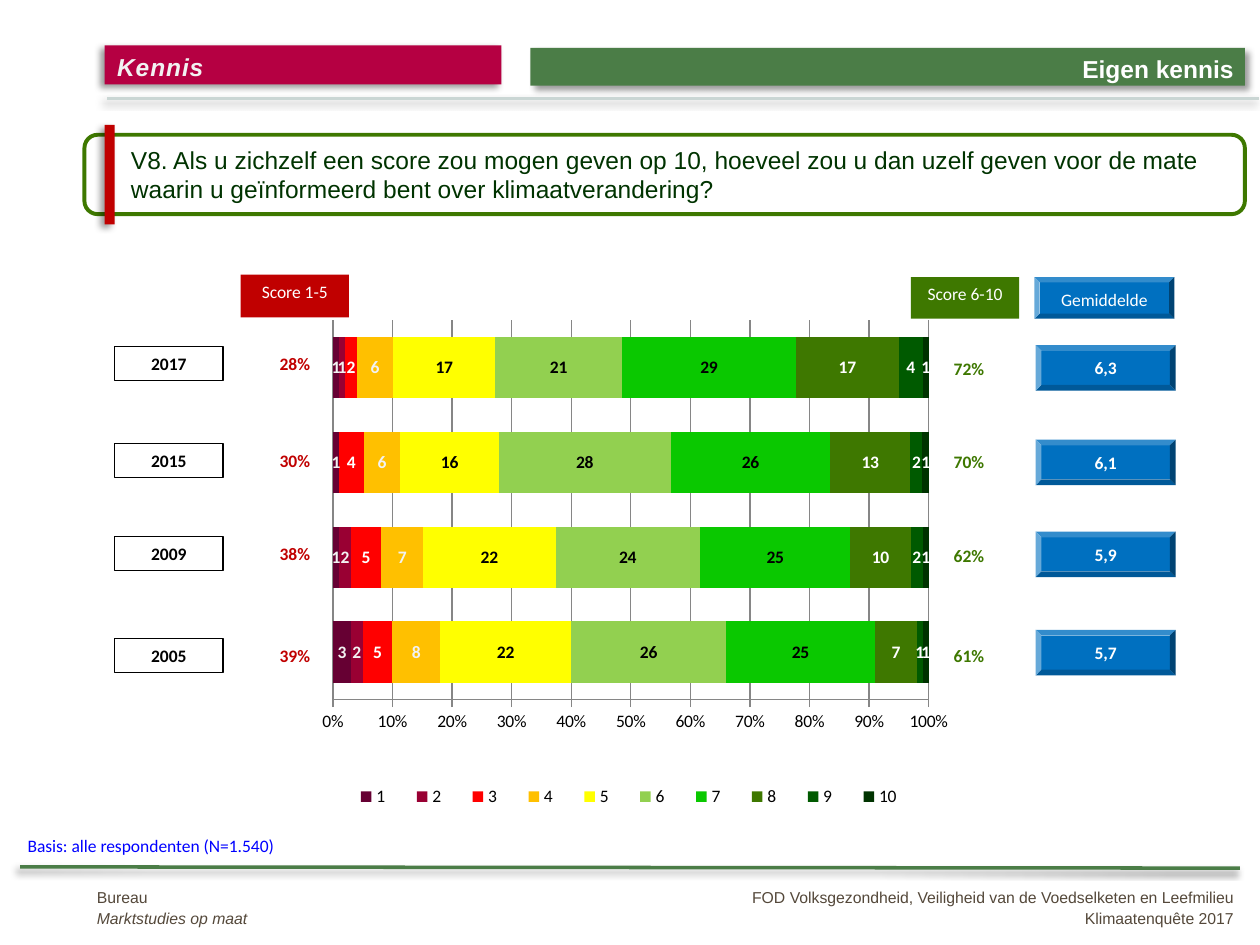
import pptx
import pptx.chart.data
import pptx.dml.color
import pptx.enum.chart
import pptx.enum.shapes
import pptx.enum.text
import pptx.oxml
import pptx.oxml.ns
import pptx.util
from lxml import etree

Inches, Pt = pptx.util.Inches, pptx.util.Pt
RGBColor = pptx.dml.color.RGBColor
SHAPE = pptx.enum.shapes.MSO_SHAPE
ALIGN = pptx.enum.text.PP_ALIGN
TOP = pptx.enum.text.MSO_ANCHOR.TOP
qn = pptx.oxml.ns.qn

WHITE = RGBColor(0xFF, 0xFF, 0xFF)
BLACK = RGBColor(0, 0, 0)
PALE = RGBColor(0xF2, 0xF2, 0xF2)
GRAY = RGBColor(0x86, 0x86, 0x86)
MIST = RGBColor(0xCA, 0xD6, 0xD4)
BROWN = RGBColor(0x54, 0x48, 0x3A)
MOSS = RGBColor(0x4B, 0x7D, 0x47)
GREEN = RGBColor(0x3E, 0x78, 0x00)
DARK = RGBColor(0x00, 0x33, 0x00)
WINE = RGBColor(0xB5, 0x00, 0x42)
RED = RGBColor(0xC0, 0x00, 0x00)
BLUE = RGBColor(0x00, 0x70, 0xC0)
LINK = RGBColor(0x00, 0x00, 0xFF)

# name, values for 2005 to 2017, fill, label colour
SERIES = [
    ("1", (3, 1, 1, 1), RGBColor(0x66, 0x00, 0x33), PALE),
    ("2", (2, 2, None, 1), RGBColor(0x99, 0x00, 0x33), PALE),
    ("3", (5, 5, 4, 2), RGBColor(0xFF, 0x00, 0x00), WHITE),
    ("4", (8, 7, 6, 6), RGBColor(0xFF, 0xC0, 0x00), PALE),
    ("5", (22, 22, 16, 17), RGBColor(0xFF, 0xFF, 0x00), BLACK),
    ("6", (26, 24, 28, 21), RGBColor(0x92, 0xD0, 0x50), BLACK),
    ("7", (25, 25, 26, 29), RGBColor(0x0A, 0xC8, 0x00), BLACK),
    ("8", (7, 10, 13, 17), GREEN, WHITE),
    ("9", (1, 2, 2, 4), RGBColor(0x00, 0x5A, 0x00), WHITE),
    ("10", (1, 1, 1, 1), DARK, WHITE),
]


def shade(shape, angle=None):
    """Give the shape a soft shadow, or none without an angle."""
    effect = etree.SubElement(shape.element.spPr, qn("a:effectLst"))
    if angle is None:
        return
    outer = etree.SubElement(effect, qn("a:outerShdw"), blurRad=str(Pt(4)),
                             dist=str(Pt(3)), dir=str(angle * 60000), rotWithShape="0")
    color = etree.SubElement(outer, qn("a:srgbClr"), val="000000")
    etree.SubElement(color, qn("a:alpha"), val="40000")


def write(shape, text, size, color, font="Calibri", bold=False, align=ALIGN.LEFT, after=0):
    frame = shape.text_frame
    frame.word_wrap = True
    frame.vertical_anchor = TOP
    frame.text = text
    for para in frame.paragraphs:
        para.alignment = align
        para.space_after = Pt(after)
        for run in para.runs:
            run.font.size = Pt(size)
            run.font.name = font
            run.font.bold = bold
            run.font.color.rgb = color
    return frame


def block(slide, kind, box, fill, line=None, width=0.75, angle=None):
    shape = slide.shapes.add_shape(kind, *map(Inches, box))
    shape.fill.solid()
    shape.fill.fore_color.rgb = fill
    if line is None:
        shape.line.fill.background()
    else:
        shape.line.color.rgb = line
        shape.line.width = Pt(width)
    shade(shape, angle)
    return shape


def label(slide, box, text, size, color, **style):
    shape = slide.shapes.add_textbox(*map(Inches, box))
    return write(shape, text, size, color, **style)


def rule(slide, start, end, color):
    line = slide.shapes.add_connector(pptx.enum.shapes.MSO_CONNECTOR.STRAIGHT,
                                      *map(Inches, start + end))
    line.line.color.rgb = color
    line.line.width = Pt(2)
    shade(line, 135)


def header(slide, left, top):
    rule(slide, (left + 0.02, top + 0.42), (9.99, top + 0.42), MIST)
    title = slide.shapes.title
    title.left, title.top = Inches(left), Inches(top)
    title.width, title.height = Inches(3.15), Inches(0.31)
    title.fill.solid()
    title.fill.fore_color.rgb = WINE
    title.line.fill.background()
    shade(title, 135)
    frame = write(title, "Kennis", 14, PALE, font="Arial", bold=True)
    font = frame.paragraphs[0].runs[0].font
    font.italic = True
    font._element.set("spc", "50")
    block(slide, SHAPE.RECTANGLE, (left + 3.38, top + 0.02, 5.67, 0.3), MOSS, angle=45)
    label(slide, (left + 5.11, top + 0.02, 3.95, 0.29), "Eigen kennis", 14, WHITE,
          font="Arial", bold=True, align=ALIGN.RIGHT)


def question(slide, left, top, width, height):
    frame = write(
        block(slide, SHAPE.ROUNDED_RECTANGLE, (left, top, width, height), WHITE, GREEN, 2.25),
        "V8. Als u zichzelf een score zou mogen geven op 10, hoeveel zou u dan uzelf "
        "geven voor de mate waarin u geïnformeerd bent over klimaatverandering?",
        14, DARK, font="Arial")
    props = frame.paragraphs[0]._p.get_or_add_pPr()
    props.set("marL", str(Inches(0.24)))
    props.set("indent", "0")
    block(slide, SHAPE.RECTANGLE, (left + 0.16, top - 0.08, 0.08, 0.79), RED, angle=135)


def arrange(parent, spot, place, target=""):
    """Place a chart part by fractions of the chart's size."""
    for old in parent.findall(qn("c:layout")):
        parent.remove(old)
    layout = etree.Element(qn("c:layout"))
    manual = etree.SubElement(layout, qn("c:manualLayout"))
    if target:
        etree.SubElement(manual, qn("c:layoutTarget"), val=target)
    for name in ("xMode", "yMode"):
        etree.SubElement(manual, qn("c:" + name), val="edge")
    for name, value in zip("xywh", place):
        etree.SubElement(manual, qn("c:" + name), val=str(value))
    parent.insert(spot, layout)


def scores(slide, box):
    data = pptx.chart.data.CategoryChartData(number_format="0")
    data.categories = ["1", "2", "3", "4"]
    for name, values, _, _ in SERIES:
        data.add_series(name, values)
    kinds = pptx.enum.chart
    chart = slide.shapes.add_chart(kinds.XL_CHART_TYPE.BAR_STACKED_100,
                                   *map(Inches, box), data).chart
    chart.has_title = False
    chart.font.size = Pt(10)
    chart.font.name = "Calibri"
    chart.font.color.rgb = BLACK
    plot = chart.plots[0]
    plot.gap_width, plot.overlap = 54, 100
    plot.vary_by_categories = False
    for series, (_, _, fill, color) in zip(plot.series, SERIES):
        series.format.fill.solid()
        series.format.fill.fore_color.rgb = fill
        tags = series.data_labels
        tags.show_value = True
        tags.number_format, tags.number_format_is_linked = "0", False
        tags.font.size = Pt(10)
        tags.font.bold = True
        tags.font.color.rgb = color
    chart.category_axis.visible = False
    axis = chart.value_axis
    axis.has_major_gridlines = True
    axis.major_tick_mark = kinds.XL_TICK_MARK.OUTSIDE
    axis.tick_labels.number_format = "0%"
    axis.tick_labels.number_format_is_linked = False
    axis.maximum_scale, axis.major_unit = 1, 0.1
    for part in (axis, axis.major_gridlines):
        part.format.line.color.rgb = GRAY
    chart.has_legend = True
    chart.legend.position = kinds.XL_LEGEND_POSITION.BOTTOM
    chart.legend.include_in_layout = False
    root = chart.element
    arrange(next(root.iter(qn("c:plotArea"))), 0, (0.097, 0.024, 0.831, 0.714), "inner")
    arrange(next(root.iter(qn("c:legend"))), 1, (0.1, 0.88, 0.82, 0.08))


def heads(slide, top):
    for kind, box, fill, text in (
            (SHAPE.RECTANGLE, (1.91, top - 0.02, 0.86, 0.34), RED, "Score 1-5"),
            (SHAPE.RECTANGLE, (7.23, top, 0.86, 0.33), GREEN, "Score 6-10"),
            (SHAPE.BEVEL, (8.21, top, 1.11, 0.33), BLUE, "Gemiddelde")):
        write(block(slide, kind, box, fill), text, 10, WHITE, align=ALIGN.CENTER, after=10)


def survey(slide, top, year, low, high, mean, drop, rise):
    """Place a year's figures; drop and rise shift the high share and the mean."""
    style = dict(bold=True, align=ALIGN.CENTER, after=10)
    write(block(slide, SHAPE.RECTANGLE, (0.91, top, 0.86, 0.27), WHITE, BLACK),
          year, 10, BLACK, **style)
    label(slide, (1.91, top, 0.86, 0.28), low, 10, RED, **style)
    label(slide, (7.26, top + drop, 0.86, 0.27), high, 10, GREEN, **style)
    write(block(slide, SHAPE.BEVEL, (8.22, top - rise, 1.11, 0.36), BLUE),
          mean, 10, WHITE, **style)


def footer(slide, top):
    label(slide, (0.12, top - 0.3, 2.68, 0.27), "Basis: alle respondenten (N=1.540)", 10, LINK)
    rule(slide, (0.16, top), (9.84, top + 0.01), MOSS)
    left = label(slide, (0.67, top + 0.1, 2.36, 0.43), "Bureau\nMarktstudies op maat",
                 9, BROWN, font="Arial")
    left.paragraphs[1].runs[0].font.italic = True
    right = label(slide, (5.63, top + 0.1, 4.26, 0.43),
                  "FOD Volksgezondheid, Veiligheid van de Voedselketen en Leefmilieu\n"
                  "Klimaatenquête 2017", 9, BROWN, font="Arial", align=ALIGN.RIGHT)
    for para in left.paragraphs + right.paragraphs:
        para.line_spacing = 1.1


def main():
    deck = pptx.Presentation()
    deck.slide_width, deck.slide_height = Inches(10), Inches(7.5)
    slide = deck.slides.add_slide(deck.slide_layouts[5])
    header(slide, 0.83, 0.36)
    question(slide, 0.67, 1.07, 9.21, 0.63)
    scores(slide, (2.09, 2.44, 5.69, 4.22))
    heads(slide, 2.2)
    for row in ((2.75, "2017", "28%", "72%", "6,3", 0.04, 0.01),
                (3.52, "2015", "30%", "70%", "6,1", 0.01, 0.03),
                (4.26, "2009", "38%", "62%", "5,9", 0.02, 0.04),
                (5.07, "2005", "39%", "61%", "5,7", 0, 0.07)):
        survey(slide, *row)
    footer(slide, 6.88)
    deck.save("out.pptx")


if __name__ == "__main__":
    main()
